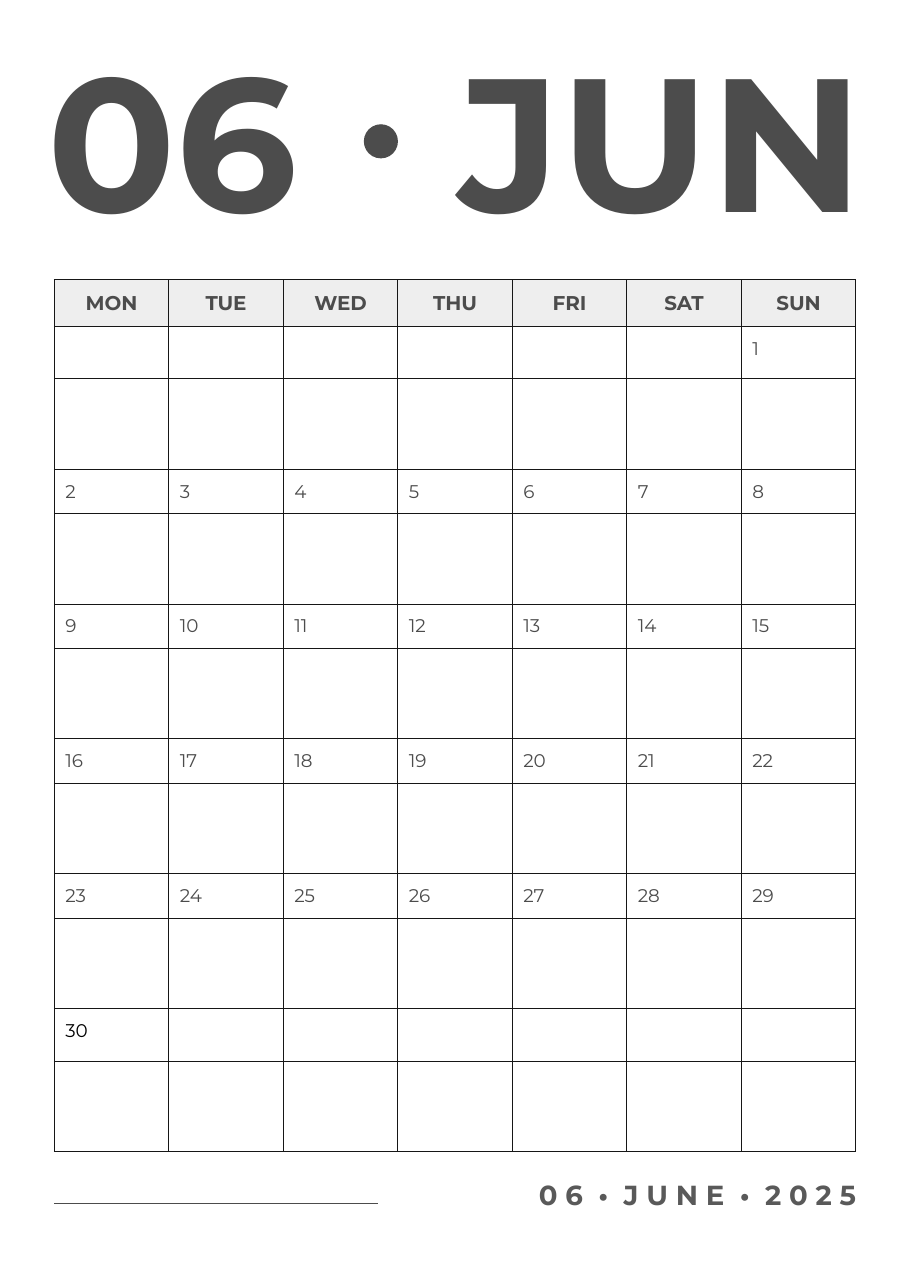
from lxml.etree import SubElement
from pptx import Presentation
from pptx.dml.color import RGBColor
from pptx.enum.shapes import MSO_CONNECTOR, MSO_SHAPE
from pptx.enum.text import MSO_ANCHOR, MSO_AUTO_SIZE, PP_ALIGN
from pptx.oxml.ns import qn
from pptx.util import Pt

FONT = "Montserrat"
INK, GRID, HEADER, FOOTER = "4C4C4C", "161616", "EEEEEE", "595959"
DAYS = ["MON", "TUE", "WED", "THU", "FRI", "SAT", "SUN"]
WEEKS, FIRST_COL, LAST_DAY = 6, 6, 30
NO_STYLE = "{2D5ABB26-0587-4C30-8999-92F81FD0307C}"


def color(hex_str):
    """Turn a hex string into a colour."""
    return RGBColor.from_string(hex_str)


def add_run(p, text, size, hex_str, bold=False):
    """Add one formatted run to a paragraph."""
    r = p.add_run()
    r.text = text
    r.font.name, r.font.size, r.font.bold = FONT, Pt(size), bold
    r.font.color.rgb = color(hex_str)
    return r


def place(sp, x, y, w, h):
    """Move and size a shape, in points."""
    sp.left, sp.top, sp.width, sp.height = Pt(x), Pt(y), Pt(w), Pt(h)


def prepare_text(sp, align):
    """Strip the margins of a text shape and return its first paragraph."""
    tf = sp.text_frame
    tf.margin_left = tf.margin_right = tf.margin_top = tf.margin_bottom = 0
    tf.word_wrap, tf.auto_size = True, MSO_AUTO_SIZE.NONE
    tf.vertical_anchor = MSO_ANCHOR.TOP
    p = tf.paragraphs[0]
    p.alignment = align
    return p


def set_borders(cell, sides):
    """Draw the named sides (L, R, T, B) of a cell."""
    tc_pr = cell._tc.get_or_add_tcPr()
    for side in sides:
        ln = SubElement(tc_pr, qn(f"a:ln{side}"), w=str(Pt(0.75)))
        fill = SubElement(ln, qn("a:solidFill"))
        SubElement(fill, qn("a:srgbClr"), val=GRID)


def fill_cell(cell, text, size, hex_str, bold=False, align=PP_ALIGN.LEFT):
    """Write text into a cell with even margins."""
    cell.margin_left = cell.margin_right = Pt(7.2)
    cell.margin_top = cell.margin_bottom = Pt(7.2)
    p = cell.text_frame.paragraphs[0]
    p.alignment = align
    add_run(p, text, size, hex_str, bold)


def add_heading(s, x, y, w, h):
    """Set the month number, the dot and the month name across a box."""
    number = s.shapes.title
    place(number, x, y, 194, h)
    add_run(prepare_text(number, PP_ALIGN.LEFT), "06", 124, INK, True)

    name = s.shapes.add_textbox(Pt(x + w - 312.5), Pt(y), Pt(312.5), Pt(h))
    add_run(prepare_text(name, PP_ALIGN.RIGHT), "JUN", 124, INK, True)

    dot = s.shapes.add_shape(MSO_SHAPE.OVAL, Pt(x + 206.8), Pt(y + 66.2),
                             Pt(22.3), Pt(22.3))
    dot.shadow.inherit = False
    dot.fill.solid()
    dot.fill.fore_color.rgb = color(INK)
    dot.line.fill.background()


def add_calendar(s, x, y, w):
    """Build the month grid: a header, then a date row and a note row per week."""
    date_heights = [34.5] + [29] * (WEEKS - 2) + [34.5]
    heights = [30.5] + [h for date in date_heights for h in (date, 59)]
    frame = s.shapes.add_table(len(heights), len(DAYS), Pt(x), Pt(y),
                               Pt(w), Pt(sum(heights)))
    table = frame.table
    table.first_row = table.horz_banding = False
    table._tbl.tblPr.find(qn("a:tableStyleId")).text = NO_STYLE
    for row, height in zip(table.rows, heights):
        row.height = Pt(height)

    for col, day_name in enumerate(DAYS):
        table.columns[col].width = Pt(w / len(DAYS))
        head = table.cell(0, col)
        set_borders(head, "LRTB")
        head.fill.solid()
        head.fill.fore_color.rgb = color(HEADER)
        head.vertical_anchor = MSO_ANCHOR.MIDDLE
        fill_cell(head, day_name, 13, INK, True, PP_ALIGN.CENTER)
        for week in range(WEEKS):
            date, note = (table.cell(2 * week + i, col) for i in (1, 2))
            set_borders(date, "LRT")
            set_borders(note, "LRB")
            day = week * len(DAYS) + col - FIRST_COL + 1
            if 1 <= day <= LAST_DAY:
                fill_cell(date, str(day), 12, "000000" if day == LAST_DAY else INK)


def add_footer(s, x, y, w, h):
    """Put a writing line on the left and the spaced date on the right."""
    line = s.shapes.add_connector(MSO_CONNECTOR.STRAIGHT, Pt(x), Pt(y + 16.6),
                                  Pt(x + 211.5), Pt(y + 16.6))
    line.line.color.rgb = color(INK)
    line.line.width = Pt(0.75)
    SubElement(line._element.spPr, qn("a:effectLst"))

    box = s.shapes.add_textbox(Pt(x + w - 286.5), Pt(y), Pt(286.5), Pt(h))
    p = prepare_text(box, PP_ALIGN.RIGHT)
    for i, word in enumerate(["0 6", "•", "J U N E", "•", "2 0 2 5"]):
        if i:
            gap = add_run(p, " ", 18, FOOTER, True)
            gap.font._element.set("spc", "500")
        add_run(p, word, 18, FOOTER, True)


def main():
    """Build the calendar page."""
    prs = Presentation()
    prs.slide_width, prs.slide_height = Pt(595.44), Pt(841.68)
    s = prs.slides.add_slide(prs.slide_layouts[5])
    add_heading(s, 31, 15, 533.5, 150.5)
    add_calendar(s, 35.5, 182.7, 524)
    add_footer(s, 35.5, 769.7, 524, 21.6)
    prs.save("out.pptx")


if __name__ == "__main__":
    main()
